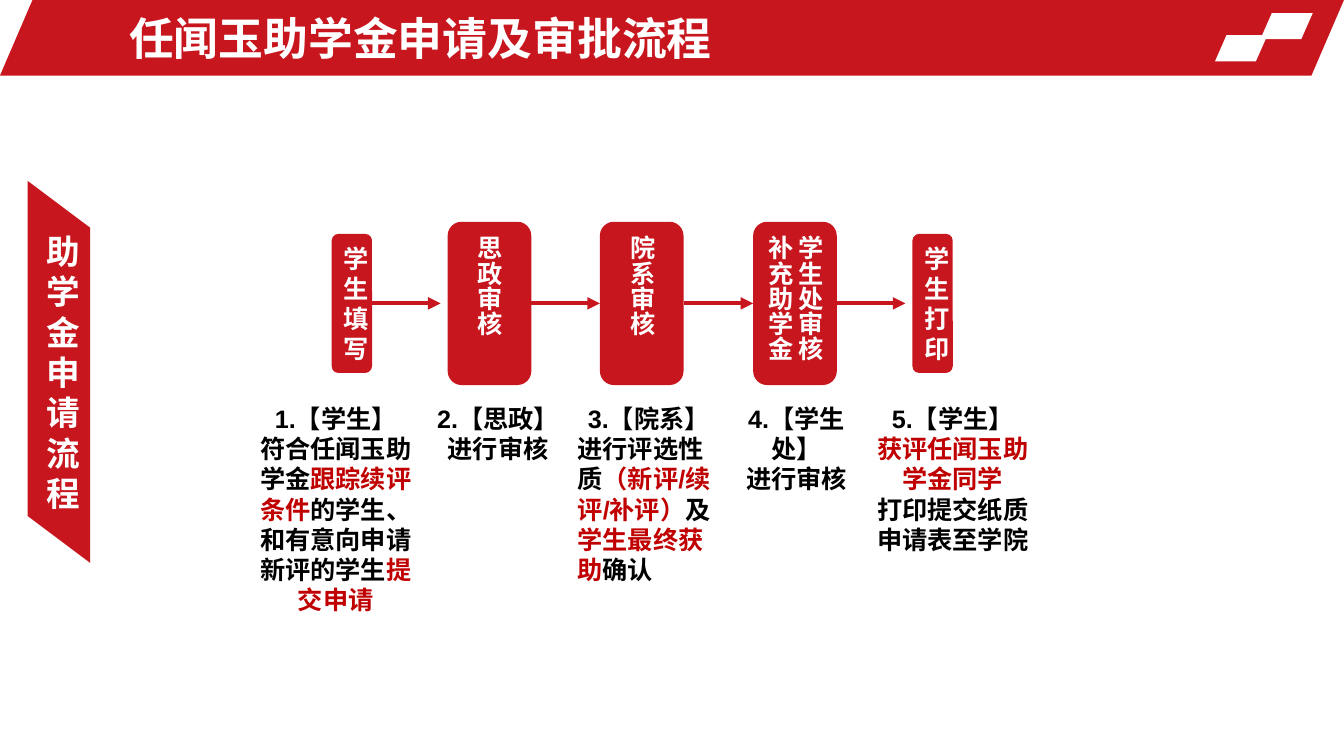
import pptx
import pptx.util
import pptx.dml.color
import pptx.enum.shapes
import pptx.enum.text
import pptx.oxml

FORM = pptx.enum.shapes.MSO_SHAPE
ALIGN = pptx.enum.text.PP_ALIGN
MIDDLE = pptx.enum.text.MSO_ANCHOR.MIDDLE
FIT = pptx.enum.text.MSO_AUTO_SIZE
NS = 'xmlns:a="http://schemas.openxmlformats.org/drawingml/2006/main"'
SCALE = 9144  # EMU in one px, 100 px to the inch
COLOR = {"brand": "C8161E", "mark": "C00000", "ink": "000000", "white": "FFFFFF"}


def px(n):
    return pptx.util.Emu(n * SCALE)


def rgb(name):
    return pptx.dml.color.RGBColor.from_string(COLOR[name])


class Deck:
    """Holds the style and the current slide."""

    font = "Arial"

    def __init__(self, wide, high):
        self.show = pptx.Presentation()
        self.show.slide_width, self.show.slide_height = px(wide), px(high)
        self.slide = self.show.slides.add_slide(self.show.slide_layouts[5])

    def words(self, frame, lines, size, color, aligns):
        """Fill a frame; text between asterisks takes the mark colour."""
        frame.word_wrap = True
        for i, (line, align) in enumerate(zip(lines, aligns)):
            para = frame.paragraphs[0] if i == 0 else frame.add_paragraph()
            para.alignment = align
            para.font.name, para.font.bold = self.font, True
            para.font.size = pptx.util.Pt(size)
            para.font.color.rgb = rgb(color)
            for j, part in enumerate(line.split("*")):
                if part:
                    run = para.add_run()
                    run.text = part
                    if j % 2:
                        run.font.color.rgb = rgb("mark")

    def title(self, box, text):
        shape = self.slide.shapes.title
        shape.left, shape.top, shape.width, shape.height = map(px, box)
        frame = shape.text_frame
        frame.auto_size, frame.vertical_anchor = FIT.NONE, MIDDLE
        self.words(frame, [text], 32, "white", [ALIGN.LEFT])
        frame.paragraphs[0].space_before = pptx.util.Pt(10)
        # Bring the title in front of the banner
        shape.element.getparent().append(shape.element)

    def shape(self, form, box, fill, adjust=None, turn=0):
        shape = self.slide.shapes.add_shape(form, *map(px, box))
        shape.shadow.inherit = False
        shape.fill.solid()
        shape.fill.fore_color.rgb = rgb(fill)
        shape.line.fill.background()
        shape.rotation = turn
        if adjust is not None:
            shape.adjustments[0] = adjust
        return shape

    def label(self, shape, lines, size, flow=None):
        frame = shape.text_frame
        frame.vertical_anchor = MIDDLE
        self.words(frame, lines, size, "white", [ALIGN.CENTER] * len(lines))
        if flow:
            shape.element.xpath(".//a:bodyPr")[0].set("vert", flow)

    def note(self, box, lines, aligns):
        frame = self.slide.shapes.add_textbox(*map(px, box)).text_frame
        self.words(frame, lines, 18, "ink", aligns)
        frame.auto_size = FIT.SHAPE_TO_FIT_TEXT

    def arrow(self, start, end, y, first, last=None):
        kind = pptx.enum.shapes.MSO_CONNECTOR.STRAIGHT
        line = self.slide.shapes.add_connector(kind, px(start), px(y), px(end), px(y))
        line.begin_connect(first, 3)
        if last is not None:
            line.end_connect(last, 1)
        line.line.color.rgb = rgb("brand")
        line.line.width = pptx.util.Pt(3)
        tail = pptx.oxml.parse_xml(f'<a:tailEnd {NS} type="triangle"/>')
        line.element.xpath(".//a:ln")[0].append(tail)
        none = pptx.oxml.parse_xml(f"<a:effectLst {NS}/>")
        line.element.spPr.append(none)


MID = 301  # centre line of the flow
GAP = 7  # space between an arrow and a slim card
SLIM, BROAD = (40, 138), (83, 162)
C, L = ALIGN.CENTER, ALIGN.LEFT

# Card left, card size, card text, note left, width, height, note text, note alignment
STEPS = [
    (329, SLIM, ["学生填写"], 242, 182, 222,
     ["1.【学生】", "符合任闻玉助学金*跟踪续评条件*的学生、和有意向申请新评的学生*提交申请*"],
     [C, C]),
    (444, BROAD, ["思政审核"], 420, 148, 71, ["2.【思政】", "进行审核"], [C, C]),
    (595, BROAD, ["院系审核"], 563, 161, 192,
     ["3.【院系】", "进行评选性质*（新评/续评/补评）*及*学生最终获助*确认"], [C, L]),
    (747, BROAD, ["学生处审核", "补充助学金"], 716, 148, 71,
     ["4.【学生处】", "进行审核"], [C, C]),
    (905, SLIM, ["学生打印"], 858, 174, 162,
     ["5.【学生】", "*获评任闻玉助学金同学*", "打印提交纸质申请表至学院"], [C, C, C]),
]


def main():
    deck = Deck(1333, 750)

    # Banner
    deck.shape(FORM.PARALLELOGRAM, (0, 0, 1333, 75), "brand", 0.43)
    for x, y in [(1250, 13), (1205, 35)]:
        deck.shape(FORM.PARALLELOGRAM, (x, y, 52, 26), "white", 0.44)
    deck.title((118, 5, 961, 65), "任闻玉助学金申请及审批流程")

    # Side heading
    side = deck.shape(FORM.PARALLELOGRAM, (-131, 338, 379, 62), "brand", 0.75, 90)
    deck.label(side, ["助学金申请流程"], 24, "vert270")

    # Steps with their notes
    cards = []
    for x, size, name, left, wide, high, lines, aligns in STEPS:
        box = (x, MID - size[1] // 2, *size)
        card = deck.shape(FORM.ROUNDED_RECTANGLE, box, "brand")
        deck.label(card, name, 18, "eaVert" if size == BROAD else None)
        deck.note((left, 395, wide, high), lines, aligns)
        cards.append(card)

    # Arrows from each step to the next
    for i in range(len(STEPS) - 1):
        x, size = STEPS[i][:2]
        end, after = STEPS[i + 1][:2]
        if size == after:
            deck.arrow(x + size[0], end, MID, cards[i], cards[i + 1])
        else:
            deck.arrow(x + size[0], end - GAP, MID, cards[i])

    deck.show.save("out.pptx")


if __name__ == "__main__":
    main()
